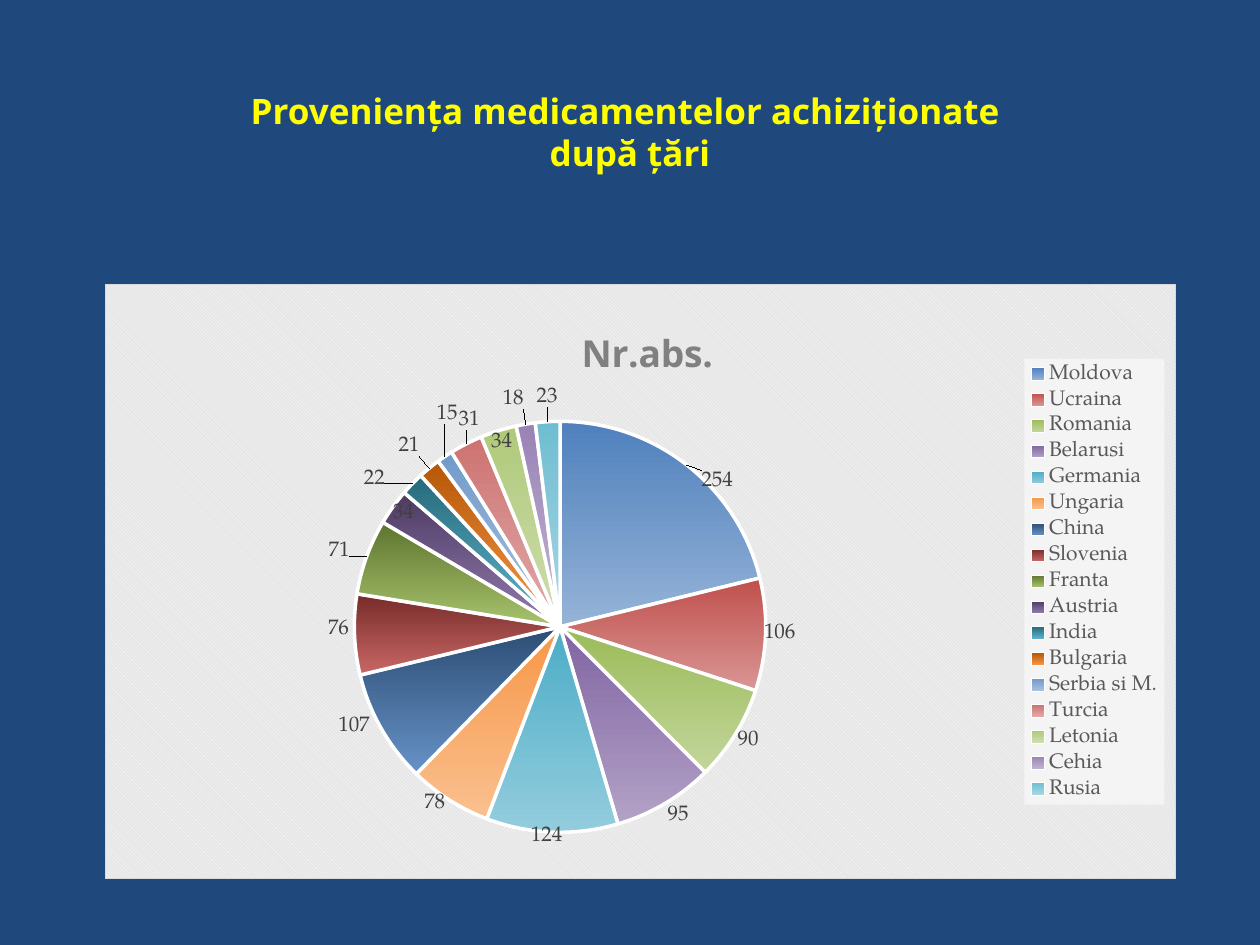
from lxml import etree
from pptx import Presentation
from pptx.chart.data import CategoryChartData
from pptx.dml.color import RGBColor
from pptx.enum.chart import XL_CHART_TYPE, XL_LABEL_POSITION, XL_LEGEND_POSITION
from pptx.enum.text import MSO_ANCHOR, PP_ALIGN
from pptx.oxml import parse_xml
from pptx.oxml.ns import nsdecls, qn
from pptx.util import Pt

PIE = XL_CHART_TYPE.PIE
OUTSIDE = XL_LABEL_POSITION.OUTSIDE_END
RIGHT = XL_LEGEND_POSITION.RIGHT
MIDDLE, CENTER = MSO_ANCHOR.MIDDLE, PP_ALIGN.CENTER
PX = 914400 / 126
CHART_BOX = (105, 284, 1071, 595)
HEADING_FONT, BODY_FONT = "Open Sans", "TeX Gyre Pagella"

# Country, value, gradient start, gradient end, label shift in px
COUNTRIES = [
    ("Moldova", 254, "4F81BD", "95B3D7", (10, 32)),
    ("Ucraina", 106, "C0504D", "D99694", (-9, -2)),
    ("Romania", 90, "9BBB59", "C3D69B", (-4, -9)),
    ("Belarusi", 95, "8064A2", "B3A2C7", (-1, -5)),
    ("Germania", 124, "4BACC6", "93CDDD", (-5, -14)),
    ("Ungaria", 78, "F79646", "FAC090", (0, -13)),
    ("China", 107, "2C4D75", "6792C6", (-5, -16)),
    ("Slovenia", 76, "772C2A", "C86765", (2, -6)),
    ("Franta", 71, "5F7530", "A7C36C", (-10, 7)),
    ("Austria", 34, "4D3B62", "937BB0", (27, 21)),
    ("India", 22, "276A7C", "61B6CD", (-22, 11)),
    ("Bulgaria", 21, "B65708", "F79747", (-5, -6)),
    ("Serbia si M.", 15, "729ACA", "ABC3DF", (17, -26)),
    ("Turcia", 31, "CD7371", "E1ABAA", (17, -7)),
    ("Letonia", 34, "AFC97A", "CFDEAF", (16, 29)),
    ("Cehia", 18, "9983B5", "C2B5D2", (-1, -7)),
    ("Rusia", 23, "6FBDD1", "A9D7E4", (0, -7)),
]


def style(font, name, size, color, bold=False):
    font.name, font.size, font.bold = name, Pt(size), bold
    font.color.rgb = RGBColor.from_string(color)


def place(parent, index, modes, **lengths):
    """Give a chart part a manual layout, in px within the chart."""
    for old in parent.findall(qn("c:layout")):
        parent.remove(old)
    layout = parse_xml(f"<c:layout {nsdecls('c')}><c:manualLayout/></c:layout>")
    for tag, value in modes.items():
        etree.SubElement(layout[0], qn(f"c:{tag}")).set("val", value)
    for tag, length in lengths.items():
        whole = CHART_BOX[2] if tag in "xw" else CHART_BOX[3]
        etree.SubElement(layout[0], qn(f"c:{tag}")).set("val", f"{length / whole:.4f}")
    parent.insert(index, layout)


deck = Presentation()
deck.slide_width, deck.slide_height = round(1260 * PX), round(945 * PX)
page = deck.slides.add_slide(deck.slide_layouts[6])
page.background.fill.solid()
page.background.fill.fore_color.rgb = RGBColor.from_string("1F497D")

# Heading
box = page.shapes.add_textbox(*[round(v * PX) for v in (134, 55, 992, 154)])
frame = box.text_frame
frame.word_wrap = True
frame.vertical_anchor = MIDDLE
frame.text = "Proveniența medicamentelor achiziționate \vdupă țări"
frame.paragraphs[0].alignment = CENTER
for span in frame.paragraphs[0].runs:
    style(span.font, HEADING_FONT, 20, "FFFF00", True)

# Pie chart
data = CategoryChartData()
data.categories = [country[0] for country in COUNTRIES]
data.add_series("Nr.abs.", [country[1] for country in COUNTRIES])
chart = page.shapes.add_chart(PIE, *[round(v * PX) for v in CHART_BOX], data).chart
style(chart.font, BODY_FONT, 10, "FFFFFF")
edges = {"xMode": "edge", "yMode": "edge"}
plot = chart.plots[0]
plot.vary_by_categories = True
place(chart._chartSpace.chart.plotArea, 0, {"layoutTarget": "inner", **edges},
      x=249, y=137, w=412, h=412)

# Chart title
chart.has_title = True
title_frame = chart.chart_title.text_frame
title_frame.text = "Nr.abs."
style(title_frame.paragraphs[0].runs[0].font, HEADING_FONT, 21.3, "808080", True)
place(chart.chart_title._element, 1, edges, x=470, y=32)

# Legend
chart.has_legend = True
legend = chart.legend
legend.position = RIGHT
legend.include_in_layout = False
style(legend.font, BODY_FONT, 12, "595959")
place(legend._element, 1, edges, x=920, y=74, w=140, h=447)
legend._element.find(qn("c:txPr")).addprevious(parse_xml(
    f"<c:spPr {nsdecls('c', 'a')}><a:solidFill><a:srgbClr val='F4F4F4'/>"
    "</a:solidFill></c:spPr>"))

# Labels shared by all slices
plot.has_data_labels = True
labels = plot.data_labels
labels.show_value = True
labels.position = OUTSIDE
style(labels.font, BODY_FONT, 12, "404040")
labels._element.append(parse_xml(f"<c:showLeaderLines {nsdecls('c')} val='1'/>")) \
    if labels._element.find(qn("c:showLeaderLines")) is None else \
    labels._element.find(qn("c:showLeaderLines")).set("val", "1")

# Slices and their label shifts
series = plot.series[0]
for index, (_, _, start, end, shift) in enumerate(COUNTRIES):
    point = series.points[index]
    fill = point.format.fill
    fill.gradient()
    fill.gradient_angle = 270
    for stop, color in zip(fill.gradient_stops, (start, end)):
        stop.color.rgb = RGBColor.from_string(color)
    point.format.line.color.rgb = RGBColor.from_string("FFFFFF")
    point.format.line.width = Pt(2)
    label = point.data_label
    style(label.font, BODY_FONT, 12, "404040")
    label.position = OUTSIDE
    place(label._dLbl, 1, {}, x=shift[0], y=shift[1])

# Hatched chart background with a thin border
chart._chartSpace.chart.addnext(parse_xml(
    f"<c:spPr {nsdecls('c', 'a')}><a:pattFill prst='dkDnDiag'>"
    "<a:fgClr><a:srgbClr val='FFFFFF'/></a:fgClr>"
    "<a:bgClr><a:srgbClr val='E6E6E6'/></a:bgClr></a:pattFill>"
    "<a:ln w='9525'><a:solidFill><a:srgbClr val='D9D9D9'/></a:solidFill></a:ln></c:spPr>"))

deck.save("out.pptx")
